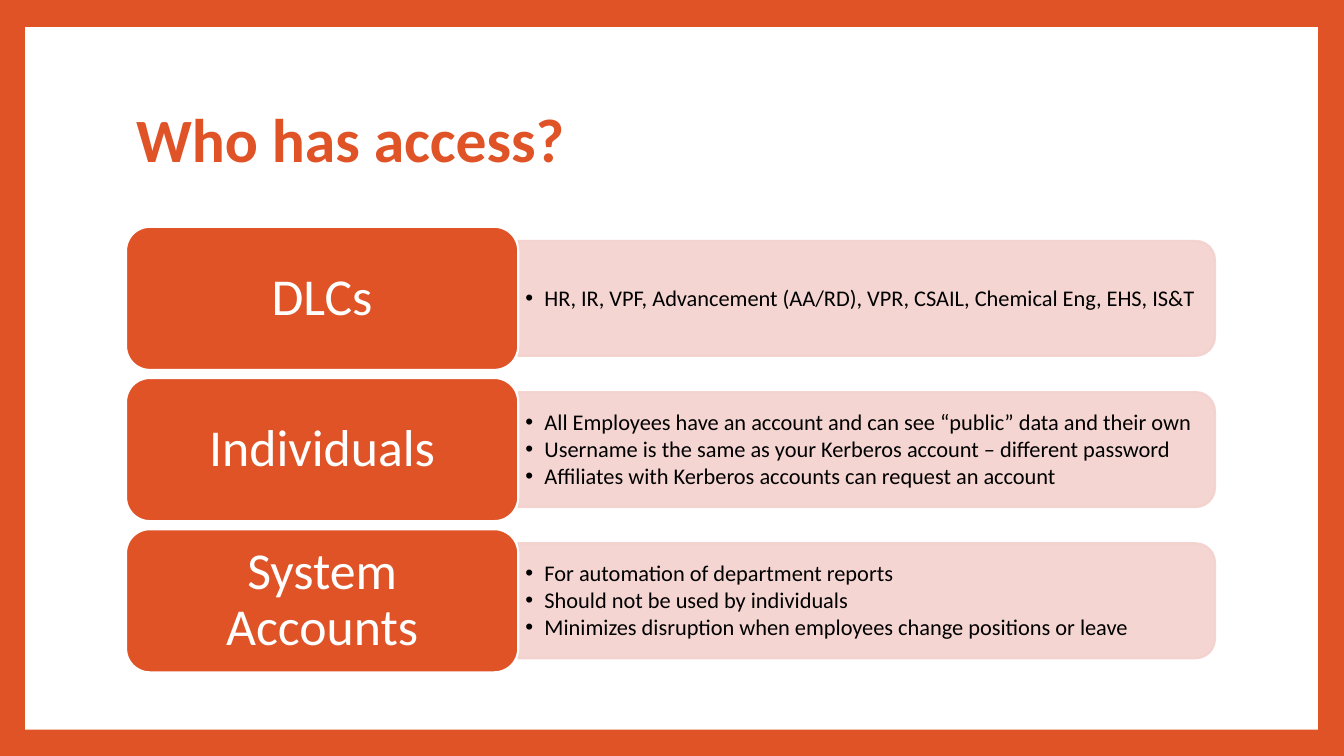
from lxml import etree
from pptx import Presentation
from pptx.dml.color import RGBColor
from pptx.enum.shapes import MSO_SHAPE
from pptx.enum.text import MSO_ANCHOR, MSO_AUTO_SIZE, PP_ALIGN
from pptx.oxml.ns import qn
from pptx.util import Inches, Pt

RECT = MSO_SHAPE.RECTANGLE
ROUNDED = MSO_SHAPE.ROUNDED_RECTANGLE
ROUND_TOP = MSO_SHAPE.ROUND_2_SAME_RECTANGLE
MIDDLE = MSO_ANCHOR.MIDDLE
NO_FIT = MSO_AUTO_SIZE.NONE
LEFT, CENTER = PP_ALIGN.LEFT, PP_ALIGN.CENTER

COLORS = {"accent": "DF5327", "tint": "F3D1CD", "white": "FFFFFF", "black": "000000"}
FONT = "Calibri"
TITLE_ONLY = 5

ROWS = [
    ("DLCs", ["HR, IR, VPF, Advancement (AA/RD), VPR, CSAIL, Chemical Eng, EHS, IS&T"]),
    ("Individuals", [
        "All Employees have an account and can see “public” data and their own",
        "Username is the same as your Kerberos account – different password",
        "Affiliates with Kerberos accounts can request an account",
    ]),
    ("System Accounts", [
        "For automation of department reports",
        "Should not be used by individuals",
        "Minimizes disruption when employees change positions or leave",
    ]),
]
LEFT_EDGE, TOP_EDGE, PITCH = 1.25, 2.25, 1.5
LABEL_W, LABEL_H = 3.89, 1.42
PANEL_W, PANEL_H = 6.91, 1.14


class SlideBuilder:
    def __init__(self, prs):
        self.slide = prs.slides.add_slide(prs.slide_layouts[TITLE_ONLY])

    def color(self, name):
        return RGBColor.from_string(COLORS[name])

    def background(self, color):
        fill = self.slide.background.fill
        fill.solid()
        fill.fore_color.rgb = self.color(color)

    def shape(self, kind, x, y, w, h, fill, line=None):
        sp = self.slide.shapes.add_shape(kind, Inches(x), Inches(y), Inches(w), Inches(h))
        sp.shadow.inherit = False
        sp.fill.solid()
        sp.fill.fore_color.rgb = self.color(fill)
        if line:
            sp.line.color.rgb = self.color(line)
            sp.line.width = Pt(1.5)
        else:
            sp.line.fill.background()
        return sp

    def frame(self, tf, inset_x, inset_y):
        tf.word_wrap = True
        tf.auto_size = NO_FIT
        tf.vertical_anchor = MIDDLE
        tf.margin_left = tf.margin_right = Inches(inset_x)
        tf.margin_top = tf.margin_bottom = Inches(inset_y)

    def add_text(self, p, text, size, color, align=LEFT, bold=False):
        p.alignment = align
        p.line_spacing = 0.9
        r = p.add_run()
        r.text = text
        r.font.name = FONT
        r.font.size = Pt(size)
        r.font.bold = bold
        r.font.color.rgb = self.color(color)

    def title(self, text, x, y, w, h):
        sp = self.slide.shapes.title
        sp.left, sp.top, sp.width, sp.height = Inches(x), Inches(y), Inches(w), Inches(h)
        self.frame(sp.text_frame, 0.1, 0.05)
        self.add_text(sp.text_frame.paragraphs[0], text, 44, "accent", bold=True)

    def panel(self, x, y, w, h):
        sp = self.shape(ROUND_TOP, x + (w - h) / 2, y - (w - h) / 2, h, w, "tint", "tint")
        sp.rotation = 90
        for clr in sp._element.spPr.iter(qn("a:srgbClr")):
            etree.SubElement(clr, qn("a:alpha"), val="90000")

    def label(self, text, x, y, w, h):
        sp = self.shape(ROUNDED, x, y, w, h, "accent", "white")
        self.frame(sp.text_frame, 0.23, 0.15)
        self.add_text(sp.text_frame.paragraphs[0], text, 37, "white", CENTER)

    def bullets(self, items, x, y, w, h):
        box = self.slide.shapes.add_textbox(Inches(x), Inches(y), Inches(w), Inches(h))
        tf = box.text_frame
        self.frame(tf, 0.07, 0.03)
        for i, item in enumerate(items):
            p = tf.add_paragraph() if i else tf.paragraphs[0]
            pPr = p._p.get_or_add_pPr()
            pPr.set("marL", str(Inches(0.19)))
            pPr.set("indent", str(Inches(-0.19)))
            etree.SubElement(pPr, qn("a:buFont"), typeface="Arial")
            etree.SubElement(pPr, qn("a:buChar"), char="•")
            p.space_after = Pt(2)
            self.add_text(p, item, 16, "black")


def main():
    prs = Presentation()
    prs.slide_width, prs.slide_height = Inches(13.33), Inches(7.5)
    s = SlideBuilder(prs)
    s.background("accent")
    s.shape(RECT, 0.25, 0.27, 12.82, 6.97, "white")
    s.title("Who has access?", 1.25, 0.67, 10.8, 1.48)

    panel_x = LEFT_EDGE + LABEL_W
    for i, (name, items) in enumerate(ROWS):
        y = TOP_EDGE + i * PITCH
        panel_y = y + (LABEL_H - PANEL_H) / 2
        s.panel(panel_x, panel_y, PANEL_W, PANEL_H)
        s.bullets(items, panel_x, panel_y + 0.06, 6.85, 1.03)
        s.label(name, LEFT_EDGE, y, LABEL_W, LABEL_H)

    title = s.slide.shapes.title._element
    title.getparent().append(title)
    prs.save("out.pptx")


if __name__ == "__main__":
    main()
